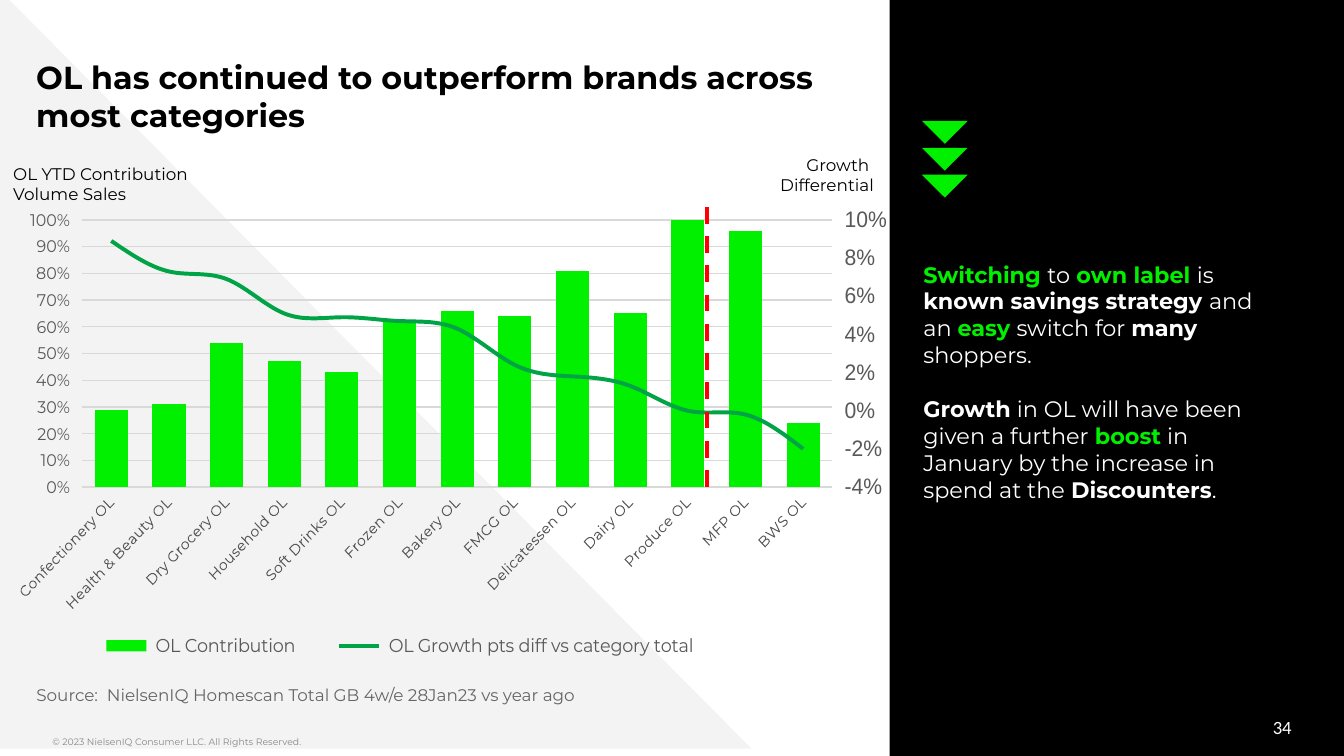
from pptx import Presentation
from pptx.chart.data import CategoryChartData
from pptx.dml.color import RGBColor
from pptx.enum.chart import XL_CHART_TYPE, XL_LEGEND_POSITION, XL_MARKER_STYLE, XL_TICK_MARK
from pptx.enum.dml import MSO_LINE
from pptx.enum.shapes import MSO_CONNECTOR, MSO_SHAPE
from pptx.enum.text import MSO_ANCHOR, PP_ALIGN
from pptx.oxml import parse_xml
from pptx.oxml.ns import nsdecls
from pptx.util import Inches, Pt

BLACK = RGBColor(0x00, 0x00, 0x00)
WHITE = RGBColor(0xFF, 0xFF, 0xFF)
PALE = RGBColor(0xF3, 0xF3, 0xF3)
GRID = RGBColor(0xD9, 0xD9, 0xD9)
GREY = RGBColor(0x88, 0x88, 0x88)
SOURCE_GREY = RGBColor(0x66, 0x66, 0x66)
AXIS_GREY = RGBColor(0x59, 0x59, 0x59)
LIME = RGBColor(0x00, 0xF0, 0x00)
GREEN = RGBColor(0x00, 0xA3, 0x46)
RED = RGBColor(0xFF, 0x00, 0x00)

CATEGORIES = ["Confectionery", "Health & Beauty", "Dry Grocery", "Household", "Soft Drinks",
              "Frozen", "Bakery", "FMCG", "Delicatessen", "Dairy", "Produce", "MFP", "BWS"]
CONTRIBUTION = [0.29, 0.31, 0.54, 0.47, 0.43, 0.62, 0.66, 0.64, 0.81, 0.65, 1, 0.96, 0.24]
GROWTH = [0.089, 0.073, 0.069, 0.051, 0.049, 0.047, 0.043,
          0.024, 0.018, 0.013, 0, -0.002, -0.02]

SAVINGS = [("Switching ", LIME, True), ("to", WHITE, False), (" own label ", LIME, True),
           ("is ", WHITE, False), ("known savings strategy ", WHITE, True),
           ("and an ", WHITE, False), ("easy ", LIME, True), ("switch for ", WHITE, False),
           ("many", WHITE, True), (" shoppers.", WHITE, False)]
DISCOUNTERS = [("Growth", WHITE, True), (" in OL will have been given a further ", WHITE, False),
               ("boost", LIME, True),
               (" in January by the increase in spend at the ", WHITE, False),
               ("Discounters", WHITE, True), (".", WHITE, False)]

LINE_CHART = f"""<c:lineChart {nsdecls('c')}><c:grouping val="standard"/><c:varyColors val="0"/>
<c:marker val="1"/><c:axId val="111"/><c:axId val="222"/></c:lineChart>"""
RIGHT_AXIS = f"""<c:valAx {nsdecls('c', 'a')}><c:axId val="222"/>
<c:scaling><c:orientation val="minMax"/><c:max val="0.1"/><c:min val="-0.04"/></c:scaling>
<c:delete val="0"/><c:axPos val="r"/><c:numFmt formatCode="0%" sourceLinked="0"/>
<c:majorTickMark val="out"/><c:minorTickMark val="none"/><c:tickLblPos val="nextTo"/>
<c:spPr><a:ln><a:noFill/></a:ln></c:spPr>
<c:txPr><a:bodyPr/><a:p><a:pPr><a:defRPr sz="1200"><a:solidFill><a:srgbClr val="{AXIS_GREY}"/>
</a:solidFill><a:latin typeface="Arial"/></a:defRPr></a:pPr></a:p></c:txPr>
<c:crossAx val="111"/><c:crosses val="max"/><c:majorUnit val="0.02"/></c:valAx>"""
HIDDEN_AXIS = f"""<c:catAx {nsdecls('c')}><c:axId val="111"/>
<c:scaling><c:orientation val="minMax"/></c:scaling><c:delete val="1"/><c:axPos val="b"/>
<c:crossAx val="222"/></c:catAx>"""


def manual_layout(x, y, w, h, target=""):
    """Return a chart layout in fractions of the chart area."""
    return parse_xml(
        f'<c:layout {nsdecls("c")}><c:manualLayout>{target}'
        '<c:xMode val="edge"/><c:yMode val="edge"/>'
        f'<c:x val="{x}"/><c:y val="{y}"/><c:w val="{w}"/><c:h val="{h}"/>'
        '</c:manualLayout></c:layout>')


def set_font(font, size, color, name="Montserrat"):
    font.size, font.name, font.color.rgb = Pt(size), name, color


class SlideBuilder:
    font = "Montserrat"

    def __init__(self, slide):
        self.slide = slide

    def shape(self, kind, box, fill, rotation=0):
        sp = self.slide.shapes.add_shape(kind, *map(Inches, box))
        sp.fill.solid()
        sp.fill.fore_color.rgb = fill
        sp.line.fill.background()
        sp.shadow.inherit = False
        sp.rotation = rotation

    def text(self, box, paragraphs, size, color=BLACK, bold=False, font=font, align=PP_ALIGN.LEFT,
             anchor=MSO_ANCHOR.TOP, inset=(0, 0.05), wrap=True, gap=0):
        """Add a text box; a paragraph is a string or a list of (text, colour, bold)."""
        tf = self.slide.shapes.add_textbox(*map(Inches, box)).text_frame
        tf.word_wrap = wrap
        tf.vertical_anchor = anchor
        tf.margin_left = tf.margin_right = Inches(inset[0])
        tf.margin_top = tf.margin_bottom = Inches(inset[1])
        for i, content in enumerate(paragraphs):
            p = tf.add_paragraph() if i else tf.paragraphs[0]
            p.alignment = align
            if i and gap:
                p.space_before = Pt(gap)
            set_font(p.font, size, color, font)
            p.font.bold = bold
            runs = [(content, color, bold)] if isinstance(content, str) else content
            for words, run_color, run_bold in runs:
                r = p.add_run()
                r.text = words
                if not isinstance(content, str):
                    r.font.color.rgb, r.font.bold = run_color, run_bold

    def dashed_line(self, x, top, bottom, color, width):
        line = self.slide.shapes.add_connector(
            MSO_CONNECTOR.STRAIGHT, Inches(x), Inches(top), Inches(x), Inches(bottom))
        line.line.color.rgb = color
        line.line.width = Pt(width)
        line.line.dash_style = MSO_LINE.DASH
        line.element.spPr.append(parse_xml(f'<a:effectLst {nsdecls("a")}/>'))

    def combined_chart(self, box):
        """Add contribution columns with growth as a line on a right-hand axis."""
        data = CategoryChartData(number_format="0%")
        data.categories = [f"{name} OL" for name in CATEGORIES]
        data.add_series(" OL Contribution ", CONTRIBUTION)
        data.add_series(" OL Growth pts diff vs category total ", GROWTH)
        chart = self.slide.shapes.add_chart(
            XL_CHART_TYPE.COLUMN_CLUSTERED, *map(Inches, box), data).chart
        set_font(chart.font, 10, BLACK, "Arial")
        chart.has_title = False
        self.style_axes(chart)
        self.move_growth_to_line(chart)

        columns, lines = chart.plots
        columns.gap_width = 74
        columns.vary_by_categories = False
        fill = columns.series[0].format.fill
        fill.solid()
        fill.fore_color.rgb = LIME
        growth = lines.series[0]
        growth.smooth = True
        growth.marker.style = XL_MARKER_STYLE.NONE
        growth.format.line.color.rgb = GREEN
        growth.format.line.width = Pt(2.25)

        chart.has_legend = True
        chart.legend.position = XL_LEGEND_POSITION.BOTTOM
        chart.legend.include_in_layout = False
        set_font(chart.legend.font, 10, AXIS_GREY)
        legend = chart.element.xpath(".//c:legend")[0]
        legend.insert(1, manual_layout(0.06, 0.92, 0.8, 0.07))

    def style_axes(self, chart):
        cat, val = chart.category_axis, chart.value_axis
        cat.major_tick_mark = XL_TICK_MARK.NONE
        cat.format.line.color.rgb = GRID
        cat.format.line.width = Pt(0.75)
        set_font(cat.tick_labels.font, 8, AXIS_GREY)
        chart.element.xpath(".//c:catAx/c:txPr/a:bodyPr")[0].set("rot", "-2700000")
        val.minimum_scale, val.maximum_scale, val.major_unit = 0, 1, 0.1
        val.format.line.fill.background()
        val.major_gridlines.format.line.color.rgb = GRID
        val.major_gridlines.format.line.width = Pt(0.75)
        val.tick_labels.number_format = "0%"
        val.tick_labels.number_format_is_linked = False
        set_font(val.tick_labels.font, 9, AXIS_GREY)

    def move_growth_to_line(self, chart):
        plot_area = chart.element.xpath(".//c:plotArea")[0]
        for layout in plot_area.xpath("./c:layout"):
            plot_area.remove(layout)
        growth = plot_area.xpath(".//c:ser")[1]
        for flag in growth.xpath("./c:invertIfNegative"):
            growth.remove(flag)
        line_chart = parse_xml(LINE_CHART)
        line_chart.insert(2, growth)
        plot_area.xpath("./c:barChart")[0].addnext(line_chart)
        plot_area.xpath("./c:valAx")[0].addnext(parse_xml(RIGHT_AXIS))
        plot_area.xpath("./c:valAx")[1].addnext(parse_xml(HIDDEN_AXIS))
        plot_area.insert(0, manual_layout(0.072, 0.034, 0.91, 0.578,
                                          '<c:layoutTarget val="inner"/>'))


def main():
    prs = Presentation()
    prs.slide_width = Inches(10)
    prs.slide_height = prs.slide_width * 9 // 16
    s = SlideBuilder(prs.slides.add_slide(prs.slide_layouts[6]))

    s.shape(MSO_SHAPE.RECTANGLE, (6.62, -0.02, 3.43, 5.66), BLACK)
    s.shape(MSO_SHAPE.RIGHT_TRIANGLE, (0, -0.07, 5.59, 5.64), PALE)
    s.text((0.39, 5.43, 5.54, 0.2), ["© 2023 NielsenIQ Consumer LLC. All Rights Reserved."], 5, GREY)
    s.text((7.36, 5.26, 2.25, 0.3), ["34"], 10, WHITE, font="Calibri",
           align=PP_ALIGN.RIGHT, anchor=MSO_ANCHOR.MIDDLE)
    s.text((6.87, 1.89, 2.62, 3.11), [SAVINGS, DISCOUNTERS], 12, WHITE, gap=14.5)
    for i in range(3):
        s.shape(MSO_SHAPE.RIGHT_TRIANGLE, (6.91, 0.78 + 0.2 * i, 0.24, 0.24), LIME, 315)
    s.text((0.27, 5.12, 8.92, 0.2),
           ["Source:  NielsenIQ Homescan Total GB 4w/e 28Jan23 vs year ago"],
           9, SOURCE_GREY, anchor=MSO_ANCHOR.BOTTOM, inset=(0, 0.1))
    s.combined_chart((0.11, 1.52, 6.49, 3.44))
    s.text((0.27, 0.33, 5.93, 0.49),
           ["OL has continued to outperform brands across most categories"],
           17, bold=True, inset=(0, 0.1))
    s.text((0, 1.17, 1.51, 0.4), ["OL YTD Contribution", "Volume Sales"], 9,
           inset=(0.1, 0.05), wrap=False)
    s.text((5.7, 1.1, 0.9, 0.4), ["Growth ", "Differential"], 9,
           align=PP_ALIGN.RIGHT, inset=(0.1, 0.05), wrap=False)
    s.dashed_line(5.26, 1.54, 3.66, RED, 2.25)
    prs.save("out.pptx")


if __name__ == "__main__":
    main()
